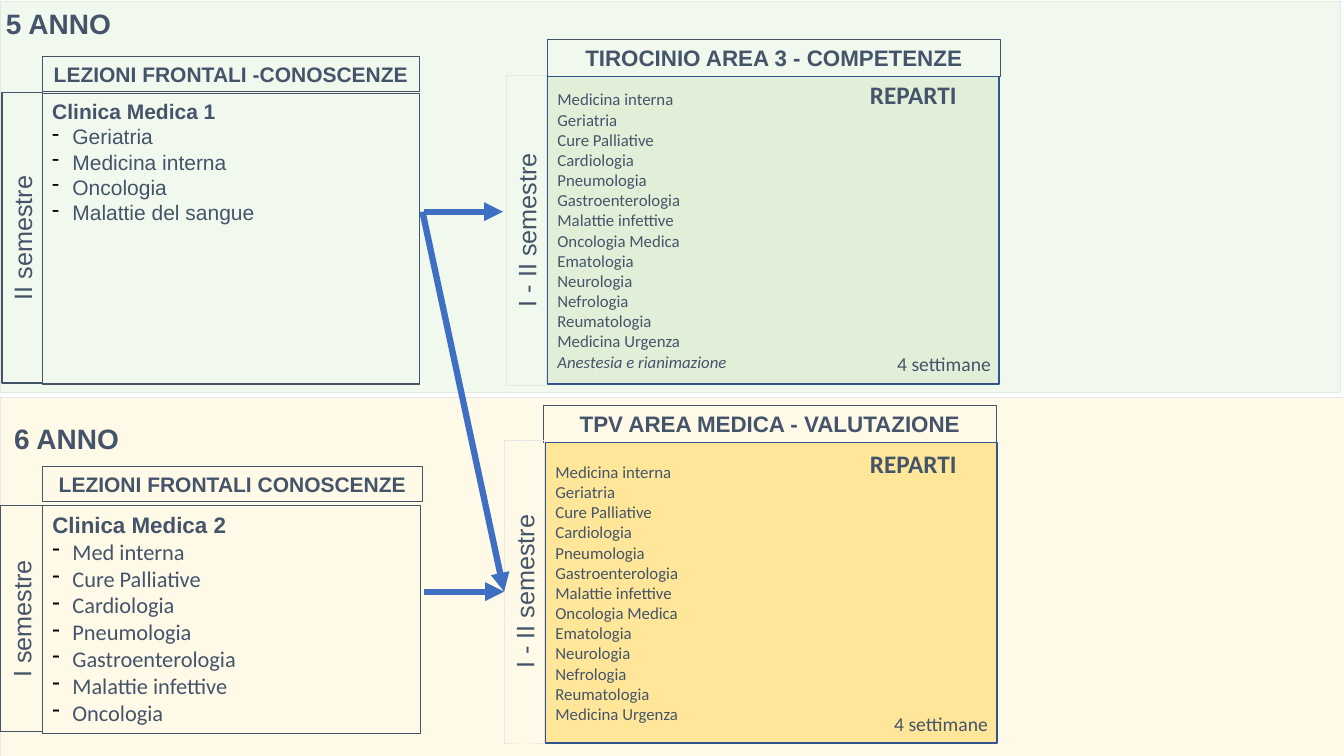
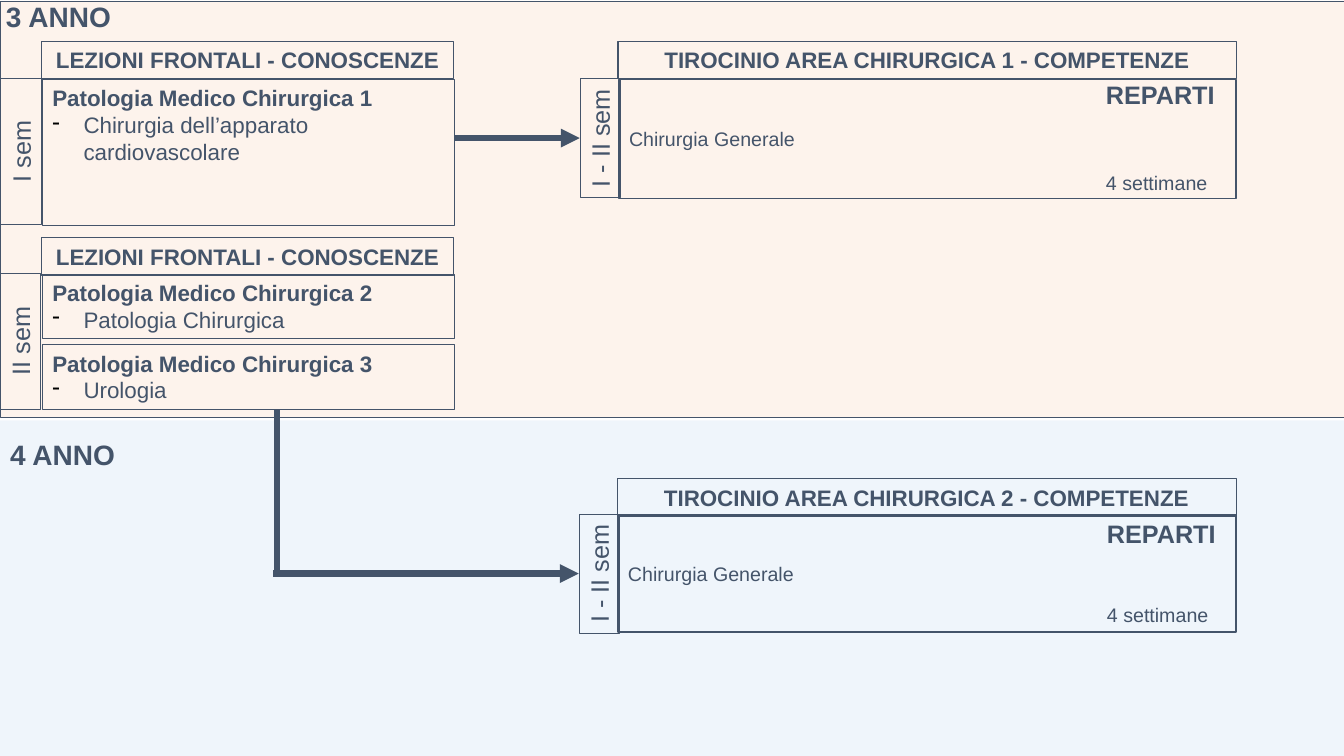
from lxml.etree import SubElement
from pptx import Presentation
from pptx.dml.color import RGBColor
from pptx.enum.shapes import MSO_CONNECTOR, MSO_SHAPE
from pptx.enum.text import MSO_ANCHOR, PP_ALIGN
from pptx.oxml.ns import qn
from pptx.util import Inches, Pt

COLORS = {
    "text": "44546A", "pale": "E7E6E6", "navy": "31538F", "blue": "3F6FC3", "black": "000000",
    "year3": "FBE5D6", "year4": "DEEBF7", "year5": "E2F0D9", "year6": "FFF2CC",
    "green": "E1EFD8", "gold": "FFE699",
}
WARDS = [
    "Medicina interna", "Geriatria", "Cure Palliative", "Cardiologia", "Pneumologia",
    "Gastroenterologia", "Malattie infettive", "Oncologia Medica", "Ematologia",
    "Neurologia", "Nefrologia", "Reumatologia", "Medicina Urgenza",
]

prs = Presentation()
prs.slide_width, prs.slide_height = Inches(13.33), Inches(7.5)
CELL = prs.slide_height / 75  # square grid: 75 rows, 133.3 columns
COLS, ROWS = 133.3, 75


def box(slide, at, lines=(), size=16, font="Arial", bold=False, center=False, side=1,
        anchor=MSO_ANCHOR.TOP, line=None, width=0.75, fill=None, alpha=None):
    """Add a rectangle, or a text box when it has neither line nor fill."""
    x, y, w, h = (round(v * CELL) for v in at)
    if line or fill:
        s = slide.shapes.add_shape(MSO_SHAPE.RECTANGLE, x, y, w, h)
        s.shadow.inherit = False
        if fill:
            s.fill.solid()
            s.fill.fore_color.rgb = RGBColor.from_string(COLORS[fill])
        else:
            s.fill.background()
        if alpha:
            clr = s.fill._xPr.find(".//" + qn("a:srgbClr"))
            SubElement(clr, qn("a:alpha"), val=str(alpha * 1000))
        if line:
            s.line.color.rgb = RGBColor.from_string(COLORS[line])
            s.line.width = Pt(width)
        else:
            s.line.fill.background()
    else:
        s = slide.shapes.add_textbox(x, y, w, h)
    tf = s.text_frame
    tf.word_wrap = True
    tf.vertical_anchor = anchor
    tf.margin_left = tf.margin_right = round(side * CELL)
    tf.margin_top = tf.margin_bottom = round(side * CELL / 2)
    tf.text = "\n".join(lines)
    for p in tf.paragraphs:
        p.alignment = PP_ALIGN.CENTER if center else PP_ALIGN.LEFT
        for r in p.runs:
            r.font.size, r.font.name, r.font.bold = Pt(size), font, bold
            r.font.color.rgb = RGBColor.from_string(COLORS["text"])
    return s


def connect(slide, start, end, color, target=None, head=True):
    """Draw a thick line; a target is joined at the middle of its left side."""
    c = slide.shapes.add_connector(MSO_CONNECTOR.STRAIGHT, *(round(v * CELL) for v in start + end))
    if target is not None:
        c.end_connect(target, 1)
    c.line.color.rgb = RGBColor.from_string(COLORS[color])
    c.line.width = Pt(4.5)
    if head:
        SubElement(c.line._get_or_add_ln(), qn("a:tailEnd"), type="triangle")
    SubElement(c._element.spPr, qn("a:effectLst"))


# Content: positions are (column, row, columns, rows) on the grid
slides = [
    {
        "bands": [((0, 39.4, COLS, ROWS - 39.4), "year6", "pale"),
                  ((0, 0.1, COLS - 0.4, 38.8), "year5", "pale")],
        "years": [(0.6, 0.7, "5 ANNO"), (1.4, 41.9, "6 ANNO")],
        "headers": [((4.2, 5.6, 37.4, 3.5), 15, "LEZIONI FRONTALI -CONOSCENZE"),
                    ((4.2, 46.3, 37.7, 3.5), 15, "LEZIONI FRONTALI CONOSCENZE"),
                    ((54.3, 3.9, 44.9, 3.7), 16, "TIROCINIO AREA 3 - COMPETENZE"),
                    ((53.9, 40.2, 44.9, 3.7), 16, "TPV AREA MEDICA - VALUTAZIONE")],
        "indent": 2,
        "courses": [((4.2, 9.3, 37.4, 28.8), 15, "Arial",
                     ["Clinica Medica 1", "Geriatria", "Medicina interna", "Oncologia",
                      "Malattie del sangue"]),
                    ((4.2, 50.2, 37.5, 22.6), 16, "Calibri",
                     ["Clinica Medica 2", "Med interna", "Cure Palliative", "Cardiologia",
                      "Pneumologia", "Gastroenterologia", "Malattie infettive", "Oncologia"])],
        "terms": [((0.2, 9.2, 4, 28.8), "II semestre", "text", 0.75),
                  ((0, 50.2, 4.2, 22.4), "I semestre", "text", 0.75),
                  ((50.2, 7.5, 4, 30.7), "I - II semestre", "pale", 0.25),
                  ((50, 43.7, 4, 30), "I - II semestre", "pale", 0.25)],
        "font": "Calibri", "size": 12, "edge": "navy",
        "wards": [((54.3, 7.6, 44.8, 30.5), "green", WARDS + ["Anestesia e rianimazione"],
                   (85.3, 7.4), (88, 34.4)),
                  ((54.1, 43.9, 44.8, 29.8), "gold", WARDS, (85.3, 44), (87.7, 70.1))],
        # start, end, index of the joined term, arrowhead
        "links": "blue",
        "lines": [((42.1, 21), (49.9, 21), None, True),
                  ((41.9, 21), (50, 58.7), 3, True),
                  ((42.1, 58.7), (50, 58.7), 3, True)],
    },
    {
        "bands": [((0, 41.7, COLS, ROWS - 41.7), "year4", None),
                  ((0, 0.1, COLS, 41.3), "year3", "text")],
        "years": [(0.6, 0, "3 ANNO"), (1, 43.5, "4 ANNO")],
        "headers": [((4.1, 4.1, 40.9, 3.7), 16, "LEZIONI FRONTALI - CONOSCENZE"),
                    ((4.1, 23.6, 40.9, 3.7), 16, "LEZIONI FRONTALI - CONOSCENZE"),
                    ((61.3, 4.1, 61.3, 3.7), 16, "TIROCINIO AREA CHIRURGICA 1 - COMPETENZE"),
                    ((61.2, 47.5, 61.4, 3.7), 16, "TIROCINIO AREA CHIRURGICA 2 - COMPETENZE")],
        "indent": 3.1,
        "courses": [((4.2, 7.9, 40.9, 14.5), 16, "Arial",
                     ["Patologia Medico Chirurgica 1",
                      "Chirurgia dell’apparato cardiovascolare"]),
                    ((4.2, 27.2, 40.9, 6.4), 16, "Arial",
                     ["Patologia Medico Chirurgica 2", "Patologia Chirurgica"]),
                    ((4.2, 34.2, 40.9, 6.4), 16, "Arial",
                     ["Patologia Medico Chirurgica 3", "Urologia"])],
        "terms": [((0, 7.8, 4.1, 14.5), "I sem", "text", 0.75),
                  ((0, 27.1, 4, 13.5), "II sem", "text", 0.75),
                  ((57.5, 7.8, 4, 11.8), "I - II sem", "text", 0.25),
                  ((57.4, 51, 4, 11.8), "I - II sem", "text", 0.25)],
        "font": "Arial", "size": 14, "edge": "text",
        "wards": [((61.4, 7.9, 61.2, 11.8), None, ["Chirurgia Generale"],
                   (108.7, 7.4), (108.7, 16.5)),
                  ((61.3, 51.1, 61.3, 11.6), None, ["Chirurgia Generale"],
                   (108.8, 50.9), (108.8, 59.3))],
        "links": "text",
        "lines": [((45.1, 13.7), (57.5, 13.7), 2, True),
                  ((27.1, 56.9), (57.4, 56.9), 3, True),
                  ((27.5, 40.6), (27.5, 56.9), None, False)],
    },
]

for d in slides:
    slide = prs.slides.add_slide(prs.slide_layouts[6])

    # Year bands and titles
    for at, fill, line in d["bands"]:
        box(slide, at, fill=fill, alpha=46, line=line, width=0.25)
    for x, y, year in d["years"]:
        box(slide, (x, y, 12, 3.2), [year], 20, bold=True, side=0, anchor=MSO_ANCHOR.MIDDLE)

    # Header bars
    for at, size, header in d["headers"]:
        box(slide, at, [header], size, bold=True, center=True, side=0,
            anchor=MSO_ANCHOR.MIDDLE, line="text")

    # Courses: bold name, then dashed topics
    for at, size, font, lines in d["courses"]:
        s = box(slide, at, lines, size, font, line="text")
        name, *topics = s.text_frame.paragraphs
        name.runs[0].font.bold, name.runs[0].font.name = True, "Arial"
        for p in topics:
            pPr = p._p.get_or_add_pPr()
            indent = round(d["indent"] * CELL)
            pPr.set("marL", str(indent))
            pPr.set("indent", str(-indent))
            SubElement(SubElement(pPr, qn("a:buClr")), qn("a:srgbClr"), val=COLORS["black"])
            SubElement(pPr, qn("a:buChar"), char="-")

    # Vertical term labels
    terms = []
    for at, term, line, width in d["terms"]:
        s = box(slide, at, [term], 18, center=True, side=0, anchor=MSO_ANCHOR.MIDDLE,
                line=line, width=width)
        s.text_frame._txBody.bodyPr.set("vert", "vert270")
        terms.append(s)

    # Ward panels with heading and duration
    for at, fill, wards, heading, weeks in d["wards"]:
        s = box(slide, at, wards, d["size"], d["font"], anchor=MSO_ANCHOR.MIDDLE,
                line=d["edge"], width=1, fill=fill)
        for p in s.text_frame.paragraphs:
            p.runs[0].font.italic = p.text.startswith("Anestesia")
        box(slide, heading + (14.1, 4), ["REPARTI"], 18, d["font"], bold=True)
        box(slide, weeks + (12.5, 3.3), ["4 settimane"], 14, d["font"])

    # Links from courses to wards
    for start, end, term, head in d["lines"]:
        connect(slide, start, end, d["links"], None if term is None else terms[term], head)

prs.save("out.pptx")
